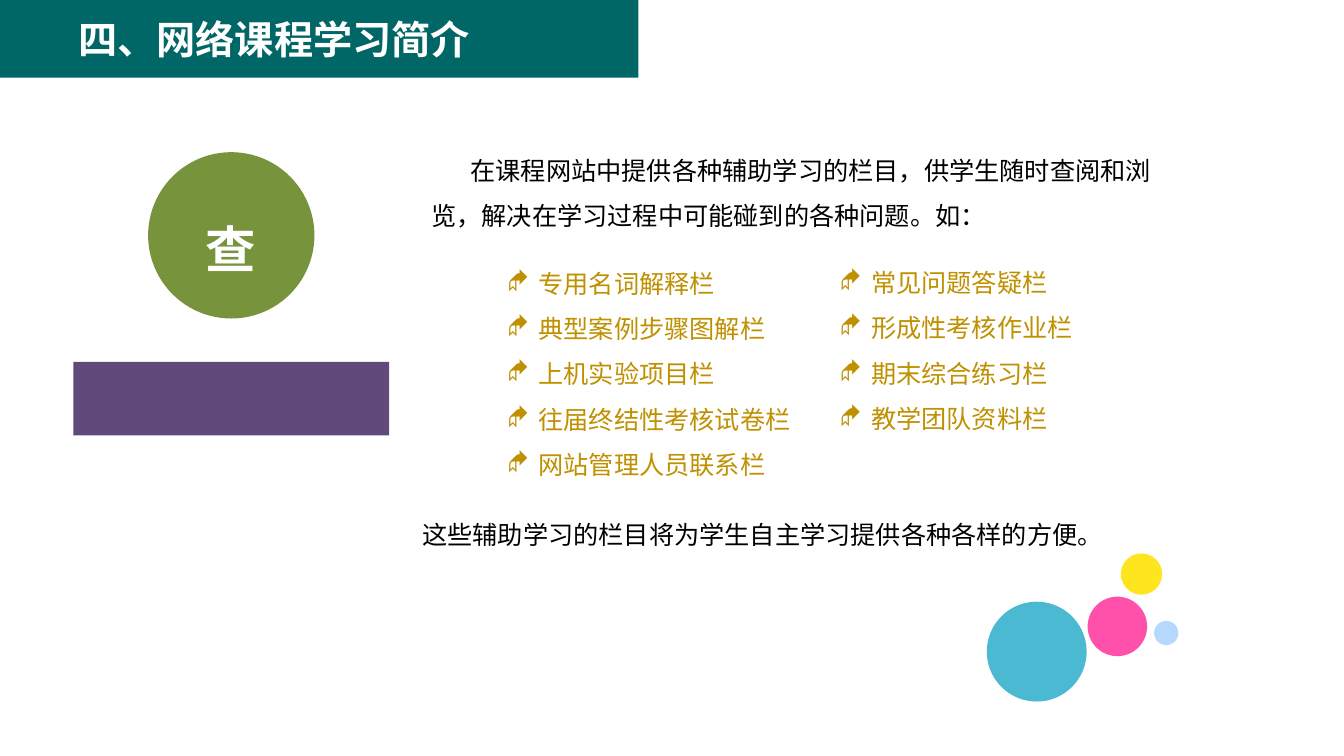
from lxml import etree
from pptx import Presentation
from pptx import util as u
from pptx.dml.color import RGBColor
from pptx.enum import shapes, text
from pptx.oxml import ns

FONT = "Noto Sans CJK SC"
HEADING = {"size": u.Pt(28), "bold": True}
BADGE = {"size": u.Pt(36), "bold": True}
BODY = {"size": u.Pt(18), "bold": False}
LEFT_COLUMNS = ["专用名词解释栏", "典型案例步骤图解栏", "上机实验项目栏",
                "往届终结性考核试卷栏", "网站管理人员联系栏"]
RIGHT_COLUMNS = ["常见问题答疑栏", "形成性考核作业栏", "期末综合练习栏", "教学团队资料栏"]
DOTS = [(704.9, 429.8, 71.3, "4BB9D2"), (776.9, 426.2, 42.5, "FF51AA"),
        (800.6, 395.3, 29.5, "FFE51E"), (824.4, 443.5, 17.3, "B6D7FE")]


def colour(target, value):
    if hasattr(target, "solid"):
        target.solid()
        target = target.fore_color
    else:
        target = target.color
    target.rgb = RGBColor.from_string(value)


def assign(target, values):
    for name, value in values.items():
        setattr(target, name, value)


class SlideBuilder:
    """Hold the slide and its style, and add each kind of element."""

    def __init__(self, presentation):
        self.slide = presentation.slides.add_slide(presentation.slide_layouts[3])
        self.title_box, self.left_list, self.right_list = self.slide.placeholders

    def place(self, shape, box):
        assign(shape, dict(zip(("left", "top", "width", "height"), map(u.Pt, box))))

    def fill_text(self, shape, lines, font, ink, spacing=1.5, indent=0, margin=0, bullet=None):
        frame = shape.text_frame
        frame.text = "\n".join(lines)
        frame.word_wrap = True
        frame.auto_size = text.MSO_AUTO_SIZE.NONE
        for paragraph in frame.paragraphs:
            assign(paragraph, {"alignment": text.PP_ALIGN.LEFT, "line_spacing": spacing,
                               "space_before": u.Pt(0)})
            properties = paragraph._p.get_or_add_pPr()
            properties.set("marL", str(u.Pt(margin)))
            properties.set("indent", str(u.Pt(indent)))
            if bullet:
                etree.SubElement(properties, ns.qn("a:buFont"), typeface="Wingdings")
                etree.SubElement(properties, ns.qn("a:buChar"), char=bullet)
            for run in paragraph.runs:
                assign(run.font, {"name": FONT, **font})
                colour(run.font, ink)
                etree.SubElement(run.font._element, ns.qn("a:ea"), typeface=FONT)

    def title(self, box, line):
        self.place(self.title_box, box)
        colour(self.title_box.fill, "006666")
        self.fill_text(self.title_box, [line], HEADING, "FFFFFF", spacing=1.0)
        assign(self.title_box.text_frame, {"margin_left": u.Pt(56),
                                           "vertical_anchor": text.MSO_ANCHOR.MIDDLE})

    def bullets(self, placeholder, box, lines):
        self.place(placeholder, box)
        self.fill_text(placeholder, lines, BODY, "BF9000", indent=-22.5, margin=22.5, bullet="◆")
        placeholder.text_frame.vertical_anchor = text.MSO_ANCHOR.TOP

    def textbox(self, box, line, font, ink, **layout):
        shape = self.slide.shapes.add_textbox(*map(u.Pt, box))
        self.fill_text(shape, [line], font, ink, **layout)

    def block(self, kind, box, fill, rotation=0):
        shape = self.slide.shapes.add_shape(kind, *map(u.Pt, box))
        shape.rotation = rotation
        shape.shadow.inherit = False
        colour(shape.fill, fill)
        shape.line.fill.background()
        return shape

    def dots(self, items):
        oval = shapes.MSO_SHAPE.OVAL
        self.slide.shapes.add_group_shape(
            [self.block(oval, (left, top, size, size), fill, 333.2)
             for left, top, size, fill in items])


def main():
    presentation = Presentation()
    assign(presentation, {"slide_width": u.Pt(960), "slide_height": u.Pt(540)})
    builder = SlideBuilder(presentation)
    builder.title((0, 0, 456, 55.5), "四、网络课程学习简介")
    builder.block(shapes.MSO_SHAPE.RECTANGLE, (52.5, 258.5, 225.5, 52.5), "604A7B")
    builder.textbox((301, 96.5, 544.5, 69),
                    "在课程网站中提供各种辅助学习的栏目，供学生随时查阅和浏览，解决在学习过程中可能碰到的各种问题。如：",
                    BODY, "000000", indent=28)
    builder.dots(DOTS)
    builder.block(shapes.MSO_SHAPE.OVAL, (105.8, 108.7, 118.8, 118.8), "77933C")
    builder.textbox((139.7, 130.3, 84.2, 64.8), "查", BADGE, "FFFFFF", spacing=u.Pt(65))
    builder.bullets(builder.left_list, (355, 177, 256.5, 170.5), LEFT_COLUMNS)
    builder.bullets(builder.right_list, (592.5, 176.5, 222.5, 138), RIGHT_COLUMNS)
    builder.textbox((266.5, 356.5, 544.5, 40), "这些辅助学习的栏目将为学生自主学习提供各种各样的方便。",
                    BODY, "000000", indent=28)
    presentation.save("out.pptx")


if __name__ == "__main__":
    main()
